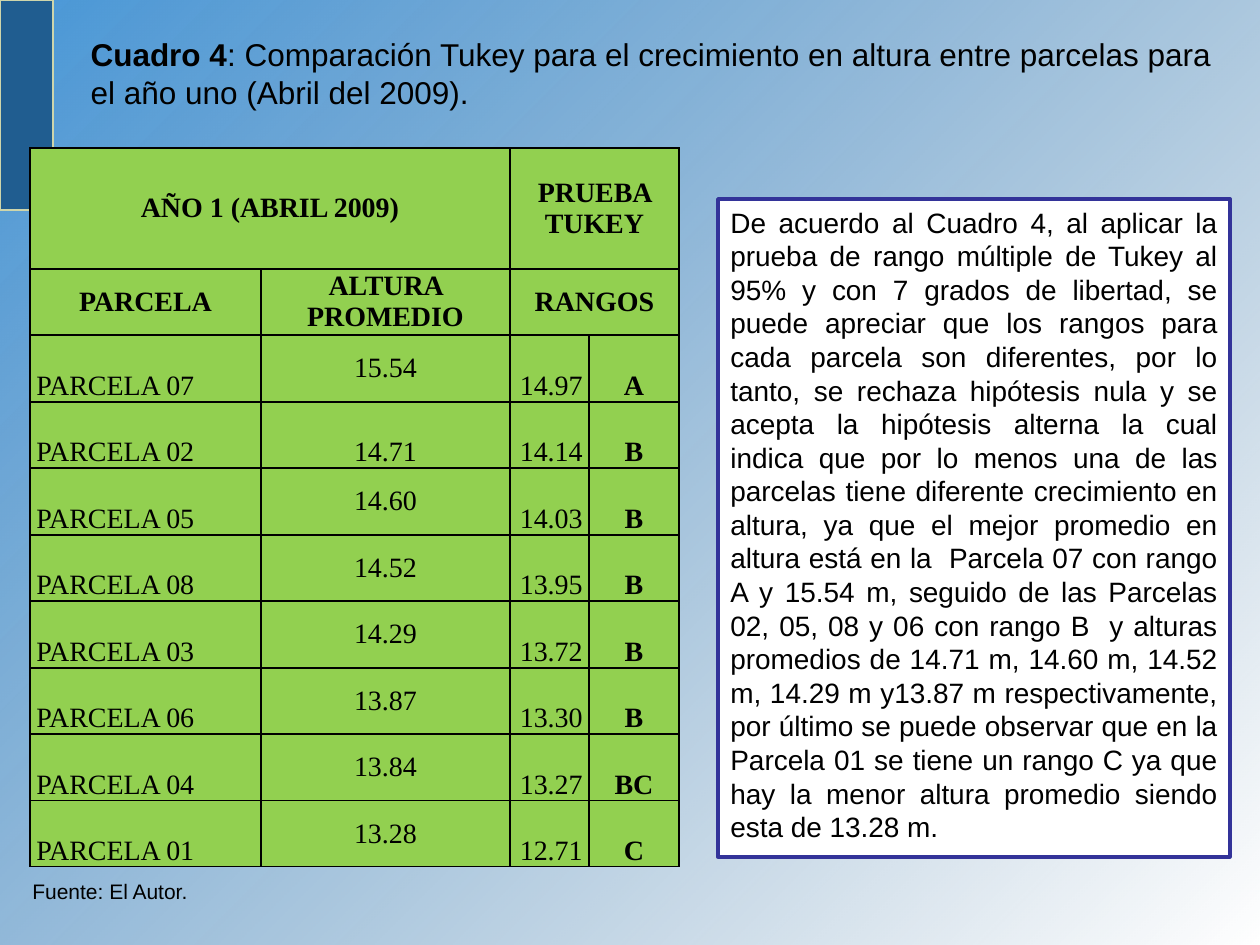
"""Builds the slide with the Tukey comparison of height growth between plots."""
import pptx
import pptx.util
import pptx.dml.color
import pptx.enum.dml
import pptx.enum.shapes
import pptx.enum.text
import pptx.oxml
import pptx.oxml.ns
from lxml import etree

SCALE = 914400 // 126
COLOURS = {"sky": "4997D7", "fade": "346C9A", "tab": "205D90", "tab_edge": "CED5AB",
           "cell": "92D050", "ink": "000000", "paper": "FFFFFF", "frame": "333399"}
ALIGN = pptx.enum.text.PP_ALIGN
ANCHOR = pptx.enum.text.MSO_ANCHOR
RECTANGLE = pptx.enum.shapes.MSO_SHAPE.RECTANGLE

HEADING = [("Cuadro 4", True),
           (": Comparación Tukey para el crecimiento en altura entre parcelas para "
            "el año uno (Abril del 2009).", False)]
HEADERS = [["AÑO 1 (ABRIL 2009)", None, "PRUEBA TUKEY", None],
           ["PARCELA", "ALTURA PROMEDIO", "RANGOS", None]]
PLOTS = [
    ["PARCELA 07", "15.54", "14.97", "A"],
    ["PARCELA 02", "14.71", "14.14", "B"],
    ["PARCELA 05", "14.60", "14.03", "B"],
    ["PARCELA 08", "14.52", "13.95", "B"],
    ["PARCELA 03", "14.29", "13.72", "B"],
    ["PARCELA 06", "13.87", "13.30", "B"],
    ["PARCELA 04", "13.84", "13.27", "BC"],
    ["PARCELA 01", "13.28", "12.71", "C"],
]
BOTTOM_HEIGHT_PLOT = "PARCELA 02"
DISCUSSION = (
    "De acuerdo al Cuadro 4, al aplicar la prueba de rango múltiple de Tukey al 95% y con "
    "7 grados de libertad, se puede apreciar que los rangos para cada parcela son diferentes, "
    "por lo tanto, se rechaza hipótesis nula y se acepta la hipótesis alterna la cual indica "
    "que por lo menos una de las parcelas tiene diferente crecimiento en altura, ya que el "
    "mejor promedio en altura está en la  Parcela 07 con rango A y 15.54 m, seguido de las "
    "Parcelas 02, 05, 08 y 06 con rango B  y alturas promedios de 14.71 m, 14.60 m, 14.52 m, "
    "14.29 m y13.87 m respectivamente, por último se puede observar que en la Parcela 01 se "
    "tiene un rango C ya que hay la menor altura promedio siendo esta de 13.28 m.")
SOURCE = "Fuente: El Autor."

COLUMN_WIDTHS = [231, 249, 79, 90]
COLUMN_ALIGN = [ALIGN.JUSTIFY, ALIGN.CENTER, ALIGN.RIGHT, ALIGN.CENTER]
TOP_ROW, BODY_HEIGHT = 121, 598


def px(*lengths):
    return [length * SCALE for length in lengths]


def rgb(name):
    return pptx.dml.color.RGBColor.from_string(COLOURS[name])


def apply(target, formats):
    for name, value in formats.items():
        setattr(target, name, value)


def write(paragraph, runs, size, face="Arial", align=ALIGN.LEFT):
    paragraph.alignment = align
    for text, bold in runs:
        run = paragraph.add_run()
        run.text = text
        apply(run.font, {"size": pptx.util.Pt(size), "name": face, "bold": bold})
        run.font.color.rgb = rgb("ink")


def add_panel(slide, box, fill=None, line=None, width=1):
    panel = slide.shapes.add_shape(RECTANGLE, *px(*box))
    panel.shadow.inherit = False
    if fill:
        panel.fill.solid()
        panel.fill.fore_color.rgb = rgb(fill)
    if line:
        panel.line.color.rgb = rgb(line)
        panel.line.width = pptx.util.Pt(width)
    else:
        panel.line.fill.background()
    return panel


def add_backdrop(slide):
    backdrop = add_panel(slide, (0, 0, 1260, 945))
    backdrop.fill.gradient()
    backdrop.fill.gradient_angle = 315
    for stop, colour, position in zip(backdrop.fill.gradient_stops, ("sky", "fade"), (0, 1)):
        stop.color.rgb = rgb(colour)
        stop.position = position
    end_colour = backdrop.element.findall(".//" + pptx.oxml.ns.qn("a:srgbClr"))[1]
    etree.SubElement(end_colour, pptx.oxml.ns.qn("a:alpha"), val="0")


def border(cell):
    properties = cell._tc.get_or_add_tcPr()
    for place, side in enumerate(("lnL", "lnR", "lnT", "lnB")):
        properties.insert(place, pptx.oxml.parse_xml(
            f'<a:{side} {pptx.oxml.ns.nsdecls("a")} w="12700"><a:solidFill>'
            f'<a:srgbClr val="{COLOURS["ink"]}"/></a:solidFill></a:{side}>'))


def add_tukey_table(slide):
    rows = HEADERS + PLOTS
    frame = slide.shapes.add_table(len(rows), len(COLUMN_WIDTHS),
                                   *px(30, 148, sum(COLUMN_WIDTHS), TOP_ROW + BODY_HEIGHT))
    table = frame.table
    for column, width in zip(table.columns, px(*COLUMN_WIDTHS)):
        column.width = width
    edges = [0] + [TOP_ROW + round(BODY_HEIGHT * i / (len(rows) - 1)) for i in range(len(rows))]
    for row, top, bottom in zip(table.rows, edges, edges[1:]):
        row.height = (bottom - top) * SCALE
    side = pptx.util.Inches(0.05)
    for r, values in enumerate(rows):
        is_header = r < len(HEADERS)
        for c, value in enumerate(values):
            cell = table.cell(r, c)
            middle = is_header or (c == 1 and values[0] != BOTTOM_HEIGHT_PLOT)
            apply(cell, {"margin_left": side, "margin_right": side, "margin_top": 0,
                         "margin_bottom": 0,
                         "vertical_anchor": ANCHOR.MIDDLE if middle else ANCHOR.BOTTOM})
            cell.fill.solid()
            cell.fill.fore_color.rgb = rgb("cell")
            border(cell)
            if value is None:
                table.cell(r, c - 1).merge(cell)
            else:
                write(cell.text_frame.paragraphs[0], [(value, is_header or c == 3)], 16,
                      "Times New Roman", ALIGN.CENTER if is_header else COLUMN_ALIGN[c])


def format_frame(shape):
    apply(shape.text_frame, {"word_wrap": True, "vertical_anchor": ANCHOR.TOP,
                             "auto_size": pptx.enum.text.MSO_AUTO_SIZE.NONE})
    return shape.text_frame.paragraphs[0]


def main():
    deck = pptx.Presentation()
    deck.slide_width, deck.slide_height = px(1260, 945)
    slide = deck.slides.add_slide(deck.slide_layouts[5])

    add_backdrop(slide)
    add_panel(slide, (0, 0, 53, 210), "tab", "tab_edge", 0.75)

    heading = slide.shapes.title
    heading.element.getparent().append(heading.element)
    apply(heading, dict(zip(("left", "top", "width", "height"), px(78, 29, 1152, 127))))
    write(format_frame(heading), HEADING, 18)

    add_tukey_table(slide)

    discussion = add_panel(slide, (718, 199, 512, 658), "paper", "frame", 2)
    write(format_frame(discussion), [(DISCUSSION, False)], 16, align=ALIGN.JUSTIFY)

    source = slide.shapes.add_textbox(*px(20, 872, 197, 63))
    write(format_frame(source), [(SOURCE, False)], 12)

    deck.save("out.pptx")


if __name__ == "__main__":
    main()
